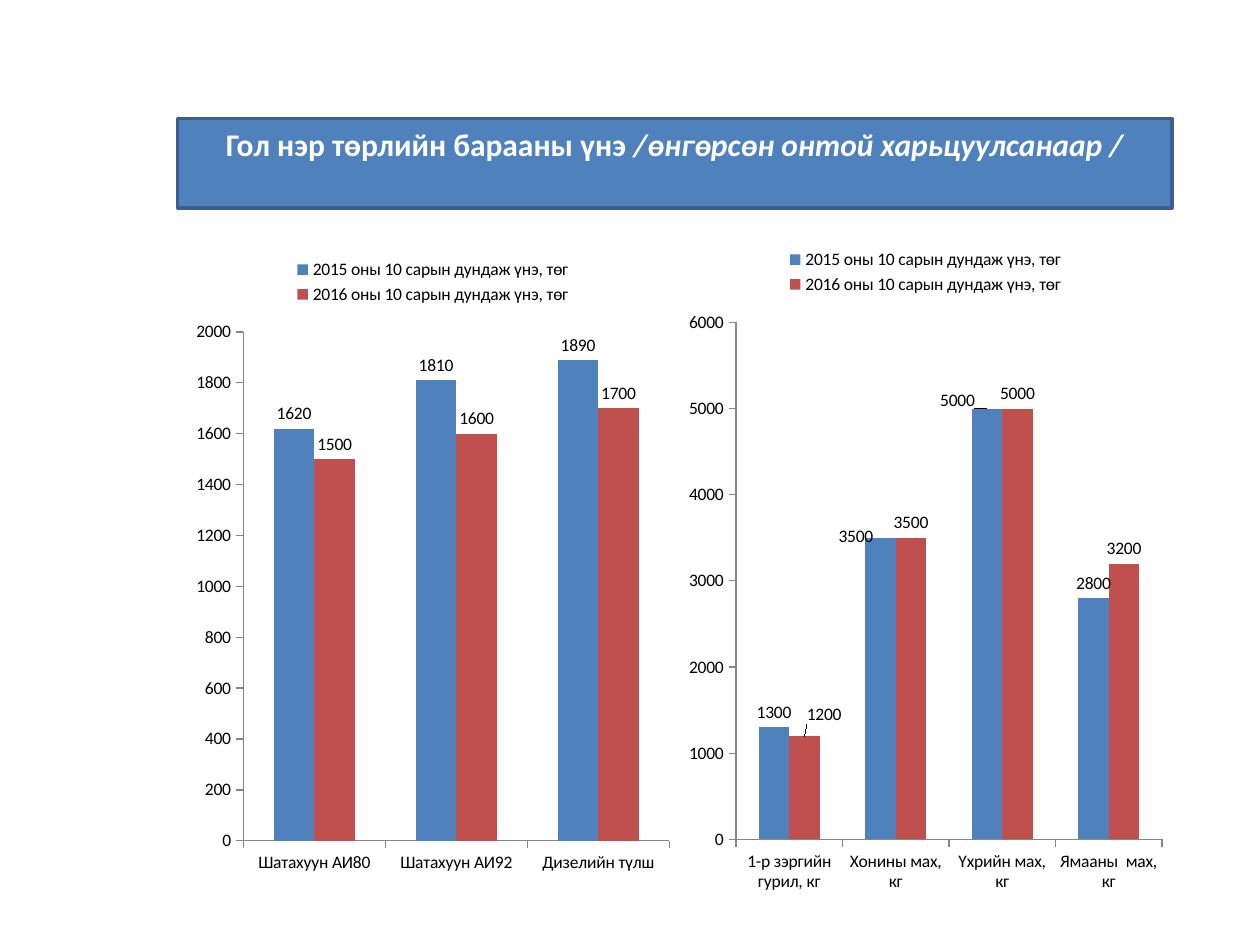
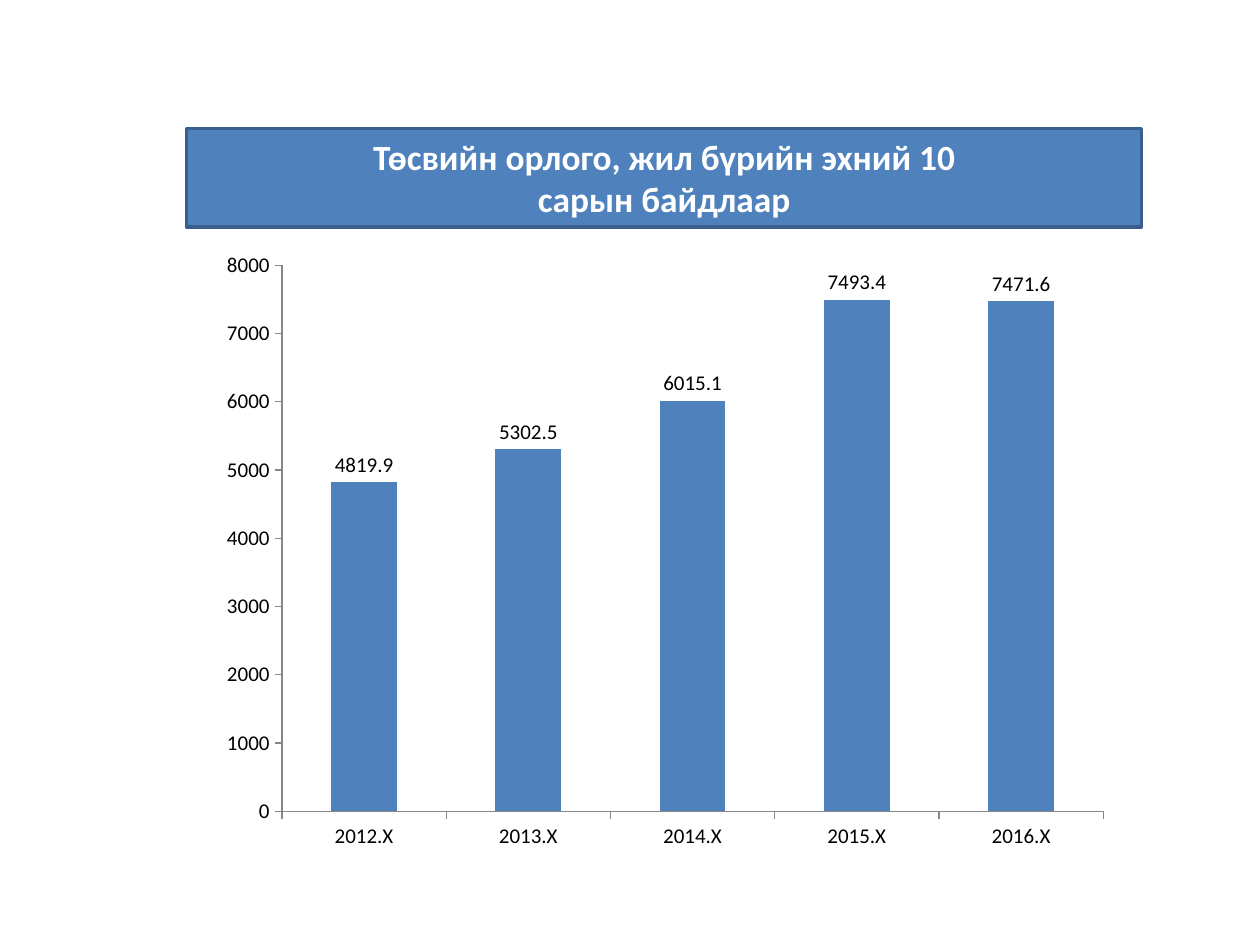
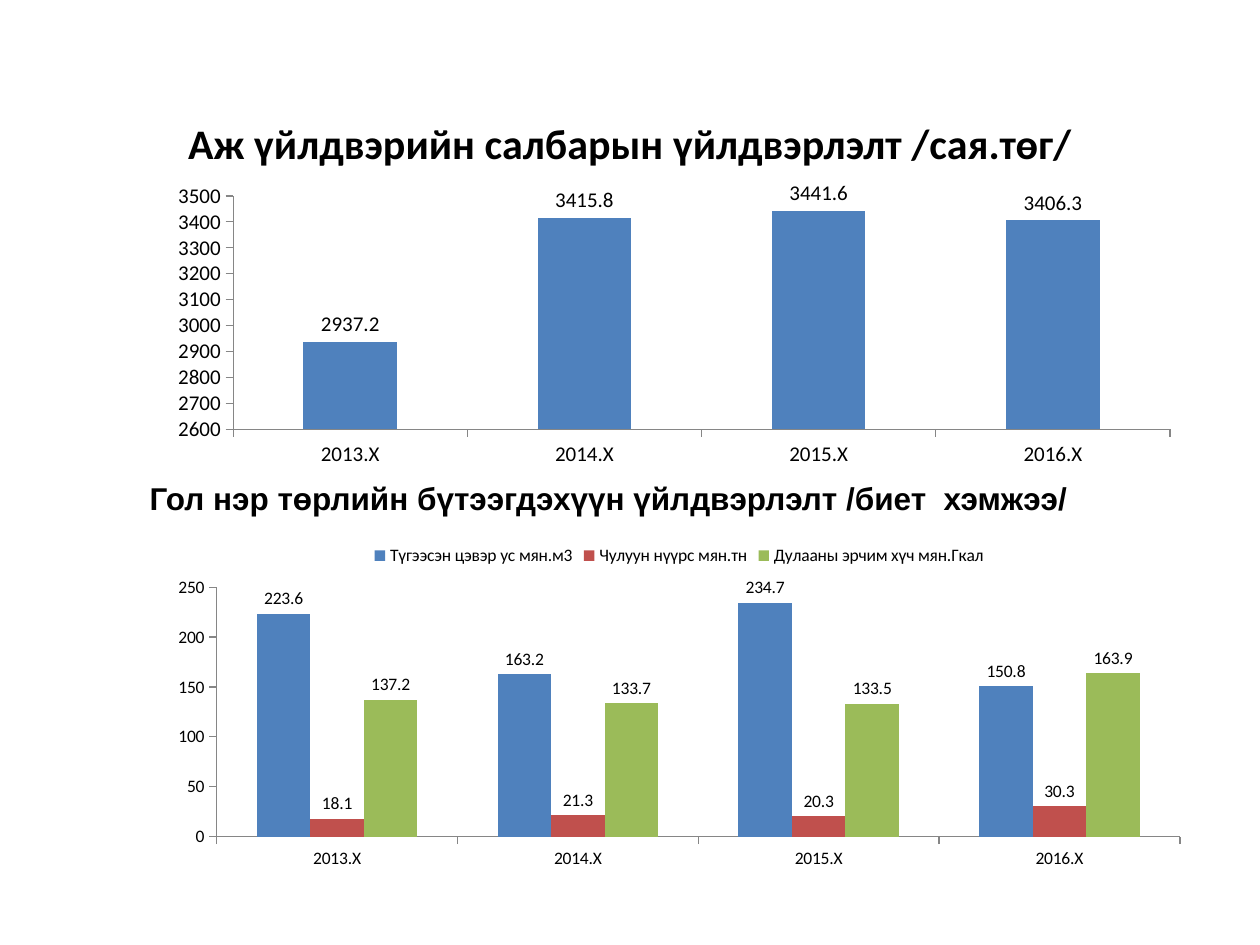
from dataclasses import dataclass, field

from lxml import etree
from pptx import Presentation
from pptx import util as u
from pptx.chart import data as cd
from pptx.dml.color import RGBColor
from pptx.enum import chart as ec, text as et
from pptx.oxml import ns

WIDTH, HEIGHT = u.Inches(10), u.Inches(7.5)
COL, ROW = WIDTH / 100, HEIGHT / 75

BLUE = RGBColor(0x4F, 0x81, 0xBD)
RED = RGBColor(0xC0, 0x50, 0x4D)
GREEN = RGBColor(0x9B, 0xBB, 0x59)
EDGE = RGBColor(0x3A, 0x5F, 0x8C)
GREY = RGBColor(0x86, 0x86, 0x86)
WHITE = RGBColor(0xFF, 0xFF, 0xFF)
BLACK = RGBColor(0, 0, 0)
HUES = (BLUE, RED, GREEN)
FONT = "Calibri"

PRICES = ("2015 оны 10 сарын дундаж үнэ, төг", "2016 оны 10 сарын дундаж үнэ, төг")
YEARS = ("2012.X", "2013.X", "2014.X", "2015.X", "2016.X")


@dataclass(frozen=True)
class Box:
    col: float
    row: float
    cols: float
    rows: float

    def place(self) -> tuple[int, int, int, int]:
        return (round(self.col * COL), round(self.row * ROW),
                round(self.cols * COL), round(self.rows * ROW))


@dataclass(frozen=True)
class Title:
    box: Box
    lines: tuple[tuple[str, ...], ...]
    size: float
    band: bool = True


@dataclass(frozen=True)
class Bars:
    box: Box
    cats: tuple[str, ...]
    rows: dict[str, tuple[float, ...]]
    top: float
    step: float
    size: float = 10
    base: float = 0
    plot: tuple[float, ...] = ()
    shifts: dict[tuple[int, int], tuple[float, float]] = field(default_factory=dict)


def style(font, size: float, color: RGBColor, name: str = FONT, bold: bool = False) -> None:
    font.size, font.name, font.bold = u.Pt(size), name, bold
    font.color.rgb = color


def layout(parts: dict[str, object]):
    root = etree.Element(ns.qn("c:layout"))
    manual = etree.SubElement(root, ns.qn("c:manualLayout"))
    for key, val in parts.items():
        etree.SubElement(manual, ns.qn(f"c:{key}")).set("val", str(val))
    return root


def add_title(slide, spec: Title) -> None:
    shape = slide.shapes.title
    shape.left, shape.top, shape.width, shape.height = spec.box.place()
    frame = shape.text_frame
    frame.word_wrap = True
    frame.auto_size = et.MSO_AUTO_SIZE.NONE
    frame.vertical_anchor = et.MSO_ANCHOR.TOP if spec.band else et.MSO_ANCHOR.MIDDLE
    if spec.band:
        shape.fill.solid()
        shape.fill.fore_color.rgb = BLUE
        shape.line.color.rgb = EDGE
        shape.line.width = u.Pt(2)
    for i, line in enumerate(spec.lines):
        para = frame.add_paragraph() if i else frame.paragraphs[0]
        para.alignment = et.PP_ALIGN.CENTER
        style(para.font, spec.size, WHITE if spec.band else BLACK, bold=True)
        for j, part in enumerate(line):
            run = para.add_run()
            run.text = part
            if j:
                run.font.italic = True


def add_head(slide, box: Box, words: str) -> None:
    frame = slide.shapes.add_textbox(*box.place()).text_frame
    frame.word_wrap = True
    para = frame.paragraphs[0]
    para.text = words
    style(para.font, 18, BLACK, "Arial", True)


def add_bars(slide, spec: Bars) -> None:
    data = cd.CategoryChartData()
    data.categories = spec.cats
    for name, vals in spec.rows.items():
        data.add_series(name, vals)
    chart = slide.shapes.add_chart(
        ec.XL_CHART_TYPE.COLUMN_CLUSTERED, *spec.box.place(), data).chart
    style(chart.font, spec.size, BLACK)
    chart.has_title = False
    chart.has_legend = len(spec.rows) > 1
    if chart.has_legend:
        chart.legend.position = ec.XL_LEGEND_POSITION.TOP
        chart.legend.include_in_layout = False

    for axis in (chart.category_axis, chart.value_axis):
        axis.has_major_gridlines = False
        axis.major_tick_mark = ec.XL_TICK_MARK.OUTSIDE
        axis.minor_tick_mark = ec.XL_TICK_MARK.NONE
        axis.format.line.color.rgb = GREY
        axis.format.line.width = u.Pt(0.75)
    scale = chart.value_axis
    scale.minimum_scale, scale.maximum_scale = spec.base, spec.top
    scale.major_unit = spec.step

    plot = chart.plots[0]
    plot.gap_width, plot.overlap, plot.vary_by_categories = 150, 0, False
    for row, hue in zip(plot.series, HUES):
        row.format.fill.solid()
        row.format.fill.fore_color.rgb = hue
        row.invert_if_negative = False
        row.data_labels.show_value = True
        row.data_labels.position = ec.XL_LABEL_POSITION.OUTSIDE_END
    for (row, point), (x, y) in spec.shifts.items():
        label = plot.series[row].points[point].data_label
        label.position = ec.XL_LABEL_POSITION.OUTSIDE_END
        mark = chart.element.xpath(
            f"(.//c:ser)[{row + 1}]/c:dLbls/c:dLbl/c:idx[@val='{point}']")[0]
        mark.addnext(layout({"x": x, "y": y}))
    if spec.plot:
        area = chart.element.xpath(".//c:plotArea")[0]
        for old in area.findall(ns.qn("c:layout")):
            area.remove(old)
        area.insert(0, layout({"layoutTarget": "inner", "xMode": "edge", "yMode": "edge",
                               **dict(zip("xywh", spec.plot))}))


def main() -> None:
    deck = Presentation()
    deck.slide_width, deck.slide_height = WIDTH, HEIGHT

    def start(title: Title):
        slide = deck.slides.add_slide(deck.slide_layouts[5])
        add_title(slide, title)
        return slide

    slide = start(Title(Box(14.1, 9.4, 78.9, 7.1),
                        (("Гол нэр төрлийн барааны үнэ ",
                          "/өнгөрсөн онтой харьцуулсанаар /"),), 18))
    add_bars(slide, Bars(
        Box(14.8, 19.5, 39.1, 50.8),
        ("Шатахуун АИ80", "Шатахуун АИ92", "Дизелийн түлш"),
        dict(zip(PRICES, ((1620, 1810, 1890), (1500, 1600, 1700)))), 2000, 200))
    add_bars(slide, Bars(
        Box(53.9, 18.7, 39.1, 53.1),
        ("1-р зэргийн гурил, кг", "Хонины мах, кг", "Үхрийн мах, кг", "Ямааны  мах, кг"),
        dict(zip(PRICES, ((1300, 3500, 5000, 2800), (1200, 3500, 5000, 3200)))),
        6000, 1000,
        shifts={(0, 1): (-0.05, 0.02), (0, 2): (-0.06, 0.01), (1, 0): (0.04, -0.01)}))

    slide = start(Title(Box(14.8, 10.2, 75.8, 7.8),
                        (("Төсвийн орлого, жил бүрийн эхний 10",),
                         ("сарын байдлаар",)), 20.2))
    add_bars(slide, Bars(
        Box(14.8, 19.5, 75.8, 51.6), YEARS,
        {"Series 1": (4819.9, 5302.5, 6015.1, 7493.4, 7471.6)},
        8000, 1000, 12, plot=(0.1, 0.03, 0.86, 0.84)))

    slide = start(Title(Box(5, 7.8, 90, 7),
                        (("Аж үйлдвэрийн салбарын үйлдвэрлэлт /сая.төг/",),), 24, False))
    add_head(slide, Box(10.9, 37.5, 86.7, 4),
             "Гол нэр төрлийн бүтээгдэхүүн үйлдвэрлэлт /биет  хэмжээ/")
    add_bars(slide, Bars(
        Box(12.5, 14.1, 82, 23.4), YEARS[1:],
        {"Series 1": (2937.2, 3415.8, 3441.6, 3406.3)}, 3500, 100, 12, 2600))
    add_bars(slide, Bars(
        Box(12.5, 42.2, 82.8, 27.3), YEARS[1:],
        {"Түгээсэн цэвэр ус мян.м3": (223.6, 163.2, 234.7, 150.8),
         "Чулуун нүүрс мян.тн": (18.1, 21.3, 20.3, 30.3),
         "Дулааны эрчим хүч мян.Гкал": (137.2, 133.7, 133.5, 163.9)}, 250, 50))

    deck.save("out.pptx")


if __name__ == "__main__":
    main()
